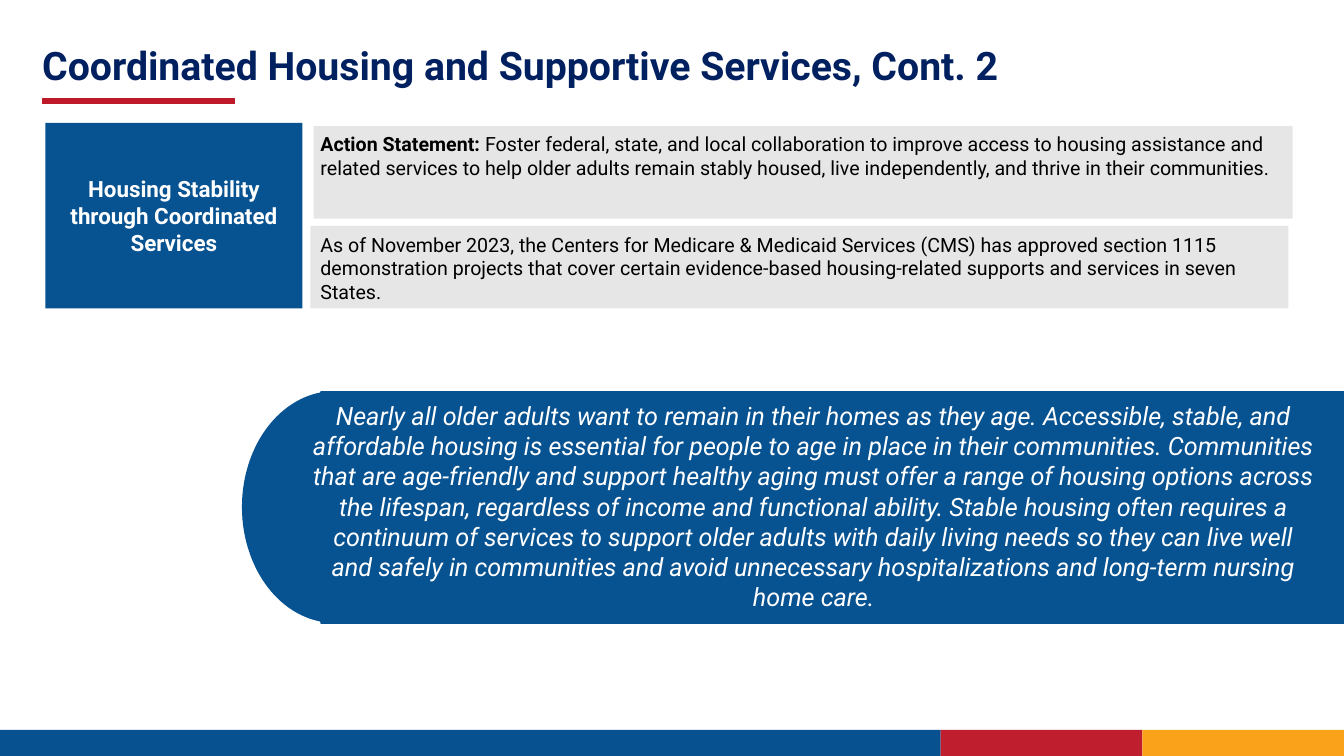
from math import cos, radians, sin
from pptx import Presentation
from pptx.dml.color import RGBColor
from pptx.enum.shapes import MSO_CONNECTOR, MSO_SHAPE
from pptx.enum.text import MSO_ANCHOR, PP_ALIGN
from pptx.oxml.ns import qn
from pptx.util import Inches, Pt
from lxml import etree

BLUE, RED, GREY = "075290", "BE1929", "E7E6E6"


def color(value):
    return RGBColor.from_string(value)


def add_text(sp, runs, size, font_color, align=PP_ALIGN.LEFT,
             anchor=MSO_ANCHOR.TOP, bold=None, italic=None):
    tf = sp.text_frame
    tf.word_wrap = True
    tf.vertical_anchor = anchor
    p = tf.paragraphs[0]
    p.alignment = align
    p.font.name = "Roboto"
    p.font.size = Pt(size)
    p.font.color.rgb = color(font_color)
    p.font.bold = bold
    p.font.italic = italic
    for text, run_bold in runs:
        r = p.add_run()
        r.text = text
        if run_bold:
            r.font.bold = True
    return p


prs = Presentation()
prs.slide_width, prs.slide_height = Inches(13.33), Inches(7.5)
s = prs.slides.add_slide(prs.slide_layouts[6])

boxes = [
    (0, 7.24, 9.33, 0.26, "075190"),
    (9.33, 7.24, 2, 0.26, "BE1E2D"),
    (11.33, 7.24, 2, 0.26, "F9A21A"),
    (3.11, 1.25, 9.71, 0.92, GREY),
    (3.08, 2.24, 9.7, 0.82, GREY),
    (0.45, 1.22, 2.55, 1.84, BLUE),
]
for left, top, width, height, fill in boxes:
    sp = s.shapes.add_shape(MSO_SHAPE.RECTANGLE, Inches(left), Inches(top),
                            Inches(width), Inches(height))
    sp.shadow.inherit = False
    sp.fill.solid()
    sp.fill.fore_color.rgb = color(fill)
    sp.line.fill.background()
add_text(sp, [("Housing Stability through Coordinated Services", False)], 16, "FFFFFF",
         PP_ALIGN.CENTER, MSO_ANCHOR.MIDDLE, bold=True)

arc = [(3.32 - 0.92 * cos(radians(a)), 5.03 + 1.15 * sin(radians(a)))
       for a in range(-81, 82, 3)]
outline = [(3.18, 3.88), (13.33, 3.88), (13.33, 6.19), (3.18, 6.19)] + arc[::-1]
points = [(Inches(x), Inches(y)) for x, y in outline]
builder = s.shapes.build_freeform(*points[0])
builder.add_line_segments(points[1:], close=True)
banner = builder.convert_to_shape()
banner.shadow.inherit = False
banner.fill.solid()
banner.fill.fore_color.rgb = color(BLUE)
banner.line.fill.background()

title = s.shapes.add_textbox(Inches(0.32), Inches(0.21), Inches(12), Inches(0.92))
p = add_text(title, [("Coordinated Housing and Supportive Services, Cont. 2", False)],
             28, "002060", anchor=MSO_ANCHOR.MIDDLE, bold=True)
p.line_spacing = 0.9

rule = s.shapes.add_connector(MSO_CONNECTOR.STRAIGHT, Inches(0.42), Inches(1),
                              Inches(2.33), Inches(1))
rule.line.color.rgb = color(RED)
rule.line.width = Pt(4.5)
etree.SubElement(rule._element.spPr, qn("a:effectLst"))

statements = [
    (1.26, [("Action Statement: ", True),
            ("Foster federal, state, and local collaboration to improve access to housing "
             "assistance and related services to help older adults remain stably housed, "
             "live independently, and thrive in their communities.", False)]),
    (2.26, [("As of November 2023, the Centers for Medicare & Medicaid Services (CMS) has "
             "approved section 1115 demonstration projects that cover certain evidence-based "
             "housing-related supports and services in seven States.", False)]),
]
for top, runs in statements:
    sp = s.shapes.add_textbox(Inches(3.08), Inches(top), Inches(9.64), Inches(0.81))
    add_text(sp, runs, 14, "000000")

quote = s.shapes.add_textbox(Inches(3), Inches(3.92), Inches(10.14), Inches(2.22))
add_text(quote, [(
    "Nearly all older adults want to remain in their homes as they age. Accessible, stable, "
    "and affordable housing is essential for people to age in place in their communities. "
    "Communities that are age-friendly and support healthy aging must offer a range of "
    "housing options across the lifespan, regardless of income and functional ability. "
    "Stable housing often requires a continuum of services to support older adults with "
    "daily living needs so they can live well and safely in communities and avoid "
    "unnecessary hospitalizations and long-term nursing home care.", False)],
    18, "FFFFFF", PP_ALIGN.CENTER, italic=True)

prs.save("out.pptx")
